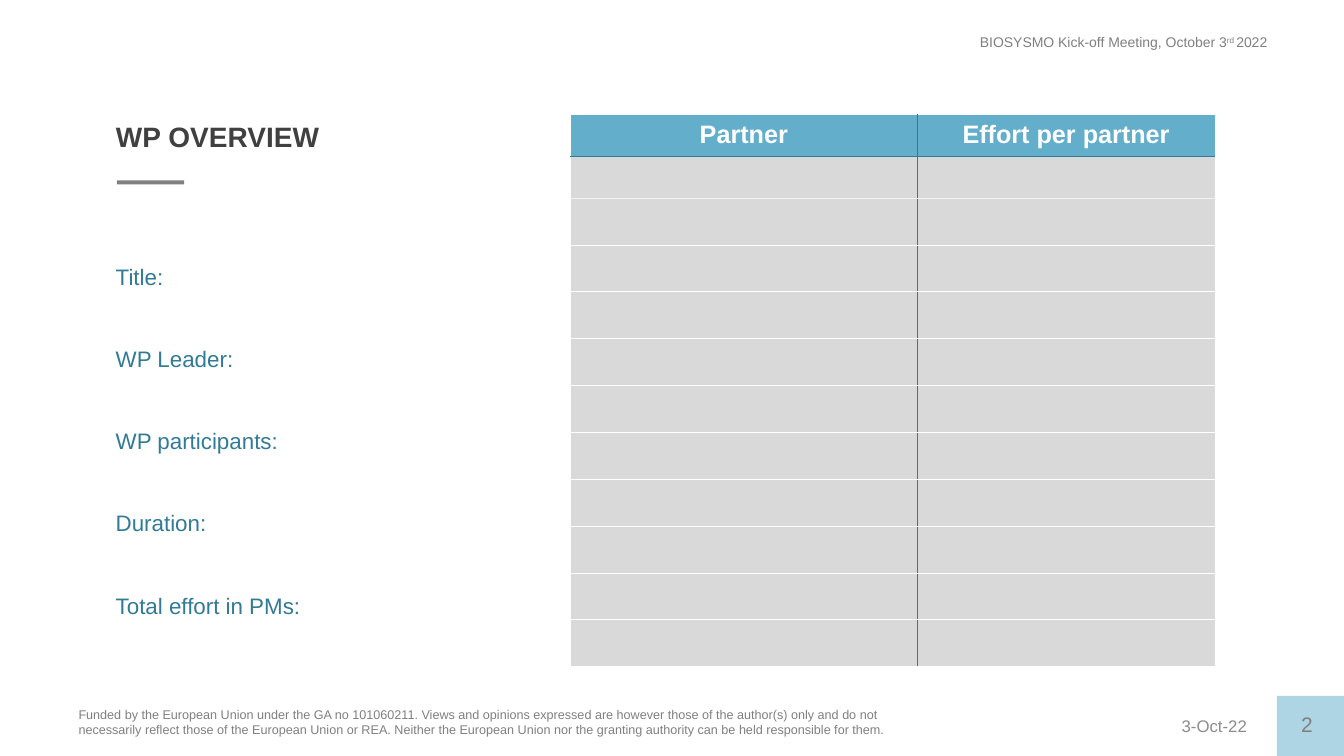
from lxml.etree import SubElement
from pptx import Presentation
from pptx.dml.color import RGBColor
from pptx.enum.shapes import MSO_SHAPE
from pptx.enum.text import MSO_ANCHOR, PP_ALIGN
from pptx.oxml.ns import qn
from pptx.util import Pt

COLORS = {
    "white": "FFFFFF", "title": "404040", "gray": "808080", "date": "8C8C8C",
    "teal": "327B97", "header": "63AECB", "corner": "AED5E4",
    "cell": "D9D9D9", "rule": "F2F2F2",
}

presentation = Presentation()
presentation.slide_width, presentation.slide_height = Pt(960), Pt(540)
slide = presentation.slides.add_slide(presentation.slide_layouts[5])


def write_text(text_frame, lines, size, color, align=PP_ALIGN.LEFT, bold=False):
    text_frame.word_wrap = True
    text_frame.text = "\n".join(lines)
    for paragraph in text_frame.paragraphs:
        paragraph.alignment = align
        for run in paragraph.runs:
            run.font.name = "Arial"
            run.font.size = Pt(size)
            run.font.bold = bold
            run.font.color.rgb = RGBColor.from_string(COLORS[color])


def add_rectangle(left, top, width, height, color):
    shape = slide.shapes.add_shape(
        MSO_SHAPE.RECTANGLE, Pt(left), Pt(top), Pt(width), Pt(height))
    shape.shadow.inherit = False
    shape.fill.solid()
    shape.fill.fore_color.rgb = RGBColor.from_string(COLORS[color])
    shape.line.fill.background()
    return shape


# Meeting name with raised ordinal
meeting = slide.shapes.add_textbox(Pt(593.3), Pt(20.2), Pt(319), Pt(19.4))
write_text(meeting.text_frame, ["BIOSYSMO Kick-off Meeting, October 3"],
           10, "gray", PP_ALIGN.RIGHT)
for text, baseline in (("rd ", "30000"), ("2022", "0")):
    run = meeting.text_frame.paragraphs[0].add_run()
    run.text = text
    run.font.name, run.font.size = "Arial", Pt(10)
    run.font.color.rgb = RGBColor.from_string(COLORS["gray"])
    run.font._element.set("baseline", baseline)

# Footer: date, corner block and funding note
date = slide.shapes.add_textbox(Pt(573.8), Pt(504), Pt(324), Pt(28.8))
write_text(date.text_frame, ["3-Oct-22"], 12, "date", PP_ALIGN.RIGHT)
date.text_frame.vertical_anchor = MSO_ANCHOR.MIDDLE
add_rectangle(912, 497, 48, 43, "corner")
funding = slide.shapes.add_textbox(Pt(49), Pt(501.1), Pt(608.4), Pt(28.8))
write_text(funding.text_frame, [
    "Funded by the European Union under the GA no 101060211. Views and opinions "
    "expressed are however those of the author(s) only and do not necessarily "
    "reflect those of the European Union or REA. Neither the European Union nor "
    "the granting authority can be held responsible for them."], 9, "gray")

# Translucent content panel
panel = add_rectangle(45.4, 38.9, 866.2, 450, "white")
panel_color = panel._element.spPr.find(qn("a:solidFill"))[0]
SubElement(panel_color, qn("a:alpha"), val="85000")

# Title, brought in front of the panel
title = slide.shapes.title
title.left, title.top, title.width, title.height = Pt(75.6), Pt(82.1), Pt(372.2), Pt(31.7)
write_text(title.text_frame, ["WP OVERVIEW"], 20, "title", bold=True)
title.text_frame.vertical_anchor = MSO_ANCHOR.TOP
panel._element.addnext(title._element)
add_rectangle(83.5, 128.9, 48, 2.9, "gray")

# Work package fields
fields = slide.shapes.add_textbox(Pt(75.6), Pt(175), Pt(316.8), Pt(265.7))
write_text(fields.text_frame, ["Title:", "WP Leader:", "WP participants:",
                               "Duration:", "Total effort in PMs:"], 16, "teal")
for paragraph in fields.text_frame.paragraphs:
    paragraph.line_spacing = 1.5
    paragraph.space_after = Pt(29.85)

# Partner effort table
headings = ["Partner", "Effort per partner"]
row_heights = [30] * 2 + [33.5] * 10
# Colour of each horizontal rule, from the top edge to the bottom edge
rules = ["white", "teal", "rule"] + ["white"] * 10
table = slide.shapes.add_table(
    len(row_heights), len(headings), Pt(407.3), Pt(81.4),
    Pt(460.5), Pt(sum(row_heights))).table
table.horz_banding = False
for column, width in zip(table.columns, (248, 212.5)):
    column.width = Pt(width)
for row_index, height in enumerate(row_heights):
    table.rows[row_index].height = Pt(height)
    for column_index, heading in enumerate(headings):
        cell = table.cell(row_index, column_index)
        cell.vertical_anchor = MSO_ANCHOR.MIDDLE
        if row_index == 0:
            write_text(cell.text_frame, [heading], 18, "white", PP_ALIGN.CENTER, True)
        borders = {
            "a:lnL": "teal" if column_index == 1 else "white",
            "a:lnR": "teal" if column_index == 0 else "white",
            "a:lnT": rules[row_index],
            "a:lnB": rules[row_index + 1],
        }
        properties = cell._tc.get_or_add_tcPr()
        for tag, color in borders.items():
            line = SubElement(properties, qn(tag), w=str(Pt(0.5)))
            fill = SubElement(line, qn("a:solidFill"))
            SubElement(fill, qn("a:srgbClr"), val=COLORS[color])
        cell.fill.solid()
        cell.fill.fore_color.rgb = RGBColor.from_string(
            COLORS["header" if row_index == 0 else "cell"])

# Page number
page_number = slide.shapes.add_textbox(Pt(922.3), Pt(504.7), Pt(33.1), Pt(25.2))
write_text(page_number.text_frame, ["2"], 15, "gray")
page_number.text_frame.word_wrap = False

presentation.save("out.pptx")
